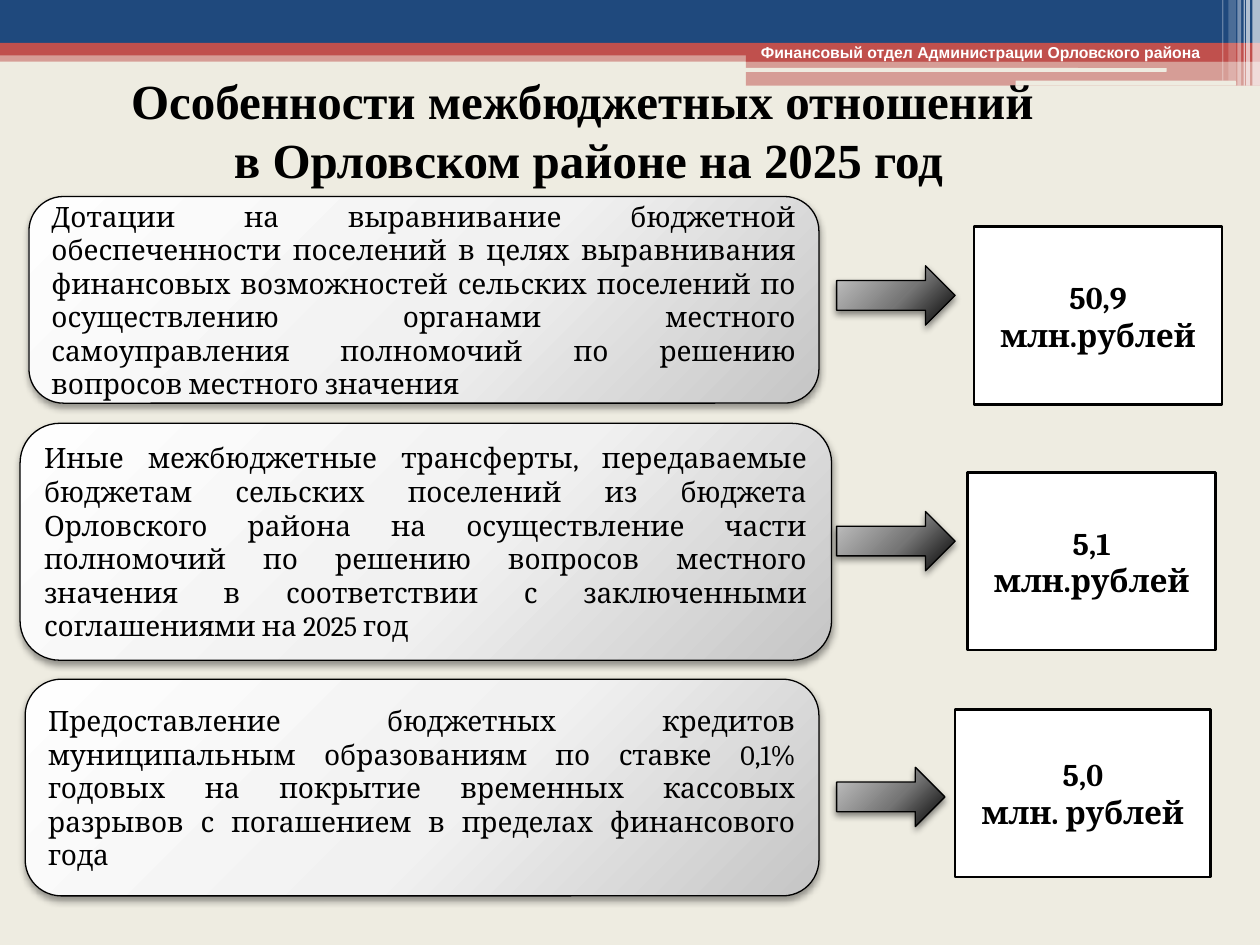
from pptx import Presentation
from pptx.dml.color import RGBColor
from pptx.enum.shapes import MSO_SHAPE as SHAPE
from pptx.enum.text import MSO_ANCHOR as ANCHOR, MSO_AUTO_SIZE as FIT, PP_ALIGN as ALIGN
from pptx.oxml import parse_xml
from pptx.oxml.ns import nsdecls, qn
from pptx.util import Inches, Pt

NAVY = RGBColor(0x1F, 0x49, 0x7D)
RED = RGBColor(0xC0, 0x50, 0x4D)
CREAM = RGBColor(0xEE, 0xEC, 0xE1)
WHITE = RGBColor(0xFF, 0xFF, 0xFF)
BLACK = RGBColor(0, 0, 0)
PALE = [(0, RGBColor(0xFE, 0xFE, 0xFE)), (55, RGBColor(0xF1, 0xF1, 0xF1)), (100, RGBColor(0xC5, 0xC5, 0xC5))]
DARK = [(0, RGBColor(0xC8, 0xC8, 0xC8)), (55, RGBColor(0x76, 0x76, 0x76)), (100, BLACK)]

HEADER = {"name": "Arial", "size": Pt(9), "bold": True}
TITLE = {"name": "Times New Roman", "size": Pt(28), "bold": True}
BODY = {"name": "Cambria", "size": Pt(16), "bold": False}
VALUE = {"name": "Cambria", "size": Pt(18), "bold": True}

BANDS = [
    ((0, 4, 100, 0.9), RED, 50),
    ((0, 0, 100, 3.4), NAVY, 100),
    ((0, 3.4, 100, 1), RED, 100),
    ((59.2, 3.9, 40.8, 1), RED, 100),
    ((59.2, 4.8, 40.8, 2), RED, 50),
]
RULES = [(59.1, 5.4, 33.5, 0.3), (80.6, 6.4, 17.5, 0.4)]
STRIPES = [
    (99.4, 0.6, 6.8, 65), (98.9, 0.3, 6.8, 65), (98.7, 0.1, 6.8, 60),
    (98.2, 0.3, 6.8, 40), (97.5, 0.6, 6.4, 20), (97, 0.1, 6.4, 30),
]
TRANSFERS = [
    ((2.3, 15.6, 62.7, 16.4), (66.4, 21.1, 9.4, 4.7), (77.3, 18, 19.7, 14.1), ["50,9", "млн.рублей"],
     "Дотации на выравнивание бюджетной обеспеченности поселений в целях выравнивания "
     "финансовых возможностей сельских поселений по осуществлению органами местного "
     "самоуправления полномочий по решению вопросов местного значения"),
    ((1.6, 33.6, 64.4, 18.8), (66.4, 40.6, 9.4, 4.7), (76.8, 37.5, 19.7, 14.1), ["5,1", "млн.рублей"],
     "Иные межбюджетные трансферты, передаваемые бюджетам сельских поселений из бюджета "
     "Орловского района на осуществление части полномочий по решению вопросов местного "
     "значения в соответствии с заключенными соглашениями на 2025 год"),
    ((2, 53.9, 63, 17.2), (66.4, 60.9, 8.6, 4.7), (75.8, 56.3, 20.3, 13.3), ["5,0", "млн. рублей"],
     "Предоставление бюджетных кредитов муниципальным образованиям по ставке 0,1% годовых "
     "на покрытие временных кассовых разрывов с погашением в пределах финансового года"),
]


class Deck:
    """Draws styled elements on one slide with a grid of 100 columns and 75 rows."""

    def __init__(self):
        self.prs = Presentation()
        self.prs.slide_width, self.prs.slide_height = Inches(10), Inches(7.5)
        self.col, self.row = self.prs.slide_width / 100, self.prs.slide_height / 75
        self.s = self.prs.slides.add_slide(self.prs.slide_layouts[5])
        bg = self.s.background.fill
        bg.solid()
        bg.fore_color.rgb = CREAM

    def cells(self, box):
        x, y, w, h = box
        return [int(v) for v in (x * self.col, y * self.row, w * self.col, h * self.row)]

    def text(self, sp, lines, fmt, color, align, anchor=ANCHOR.MIDDLE):
        tf = sp.text_frame
        for key, value in {"word_wrap": True, "auto_size": FIT.NONE, "vertical_anchor": anchor}.items():
            setattr(tf, key, value)
        tf.text = "\n".join(lines)
        for p in tf.paragraphs:
            p.alignment = align
            for r in p.runs:
                for key, value in fmt.items():
                    setattr(r.font, key, value)
                r.font.color.rgb = color

    def title(self, box, text):
        sp = self.s.shapes.title
        sp.left, sp.top, sp.width, sp.height = self.cells(box)
        self.text(sp, [text], TITLE, BLACK, ALIGN.CENTER)
        p = sp.text_frame.paragraphs[0]
        p._p.get_or_add_pPr().set("marL", str(Inches(0.09)))
        self.s.shapes._spTree.append(sp._element)

    def label(self, box, text):
        sp = self.s.shapes.add_textbox(*self.cells(box))
        self.text(sp, [text], HEADER, WHITE, ALIGN.LEFT, ANCHOR.TOP)

    def shape(self, kind, box, line=None):
        sp = self.s.shapes.add_shape(kind, *self.cells(box))
        sp.shadow.inherit = False
        if line:
            sp.line.color.rgb = BLACK
            sp.line.width = Pt(line)
        else:
            sp.line.fill.background()
        return sp

    def plain(self, kind, box, color, opacity=100, line=None):
        sp = self.shape(kind, box, line)
        sp.fill.solid()
        sp.fill.fore_color.rgb = color
        if opacity < 100:
            clr = sp._element.spPr.find(qn("a:solidFill"))[0]
            clr.append(parse_xml(f'<a:alpha {nsdecls("a")} val="{opacity * 1000}"/>'))
        return sp

    def glossy(self, kind, box, stops, shade):
        sp = self.shape(kind, box, 0.75)
        sp.fill.background()
        spPr = sp._element.spPr
        gs = "".join(f'<a:gs pos="{pos * 1000}"><a:srgbClr val="{rgb}"/></a:gs>' for pos, rgb in stops)
        spPr.replace(spPr.find(qn("a:noFill")), parse_xml(
            f'<a:gradFill {nsdecls("a")} rotWithShape="1"><a:gsLst>{gs}</a:gsLst><a:path path="circle">'
            '<a:fillToRect l="-40000" t="-90000" r="140000" b="190000"/></a:path></a:gradFill>'))
        spPr.find(qn("a:effectLst")).append(parse_xml(
            f'<a:outerShdw {nsdecls("a")} blurRad="{Pt(4)}" dist="{Pt(2)}" dir="5400000" rotWithShape="0">'
            f'<a:srgbClr val="{BLACK}"><a:alpha val="{shade * 1000}"/></a:srgbClr></a:outerShdw>'))
        return sp

    def header(self, text):
        for box, color, opacity in BANDS:
            self.plain(SHAPE.RECTANGLE, box, color, opacity)
        for box in RULES:
            self.plain(SHAPE.ROUNDED_RECTANGLE, box, CREAM)
        for x, w, h, opacity in STRIPES:
            self.plain(SHAPE.RECTANGLE, (x, 0, w, h), WHITE, opacity)
        self.label((59.4, 2.9, 39.1, 2.5), text)

    def transfer(self, card, arrow, amount, value, text):
        sp = self.glossy(SHAPE.ROUNDED_RECTANGLE, card, PALE, 40)
        self.text(sp, [text], BODY, BLACK, ALIGN.JUSTIFY)
        self.glossy(SHAPE.RIGHT_ARROW, arrow, DARK, 45)
        sp = self.plain(SHAPE.RECTANGLE, amount, WHITE, line=1.5)
        self.text(sp, value, VALUE, BLACK, ALIGN.CENTER)


def main():
    deck = Deck()
    deck.header("Финансовый отдел Администрации Орловского района")
    deck.title((0, 5.2, 92.5, 10.2), "Особенности межбюджетных отношений \vв Орловском районе на 2025 год")
    for transfer in TRANSFERS:
        deck.transfer(*transfer)
    deck.prs.save("out.pptx")


if __name__ == "__main__":
    main()
